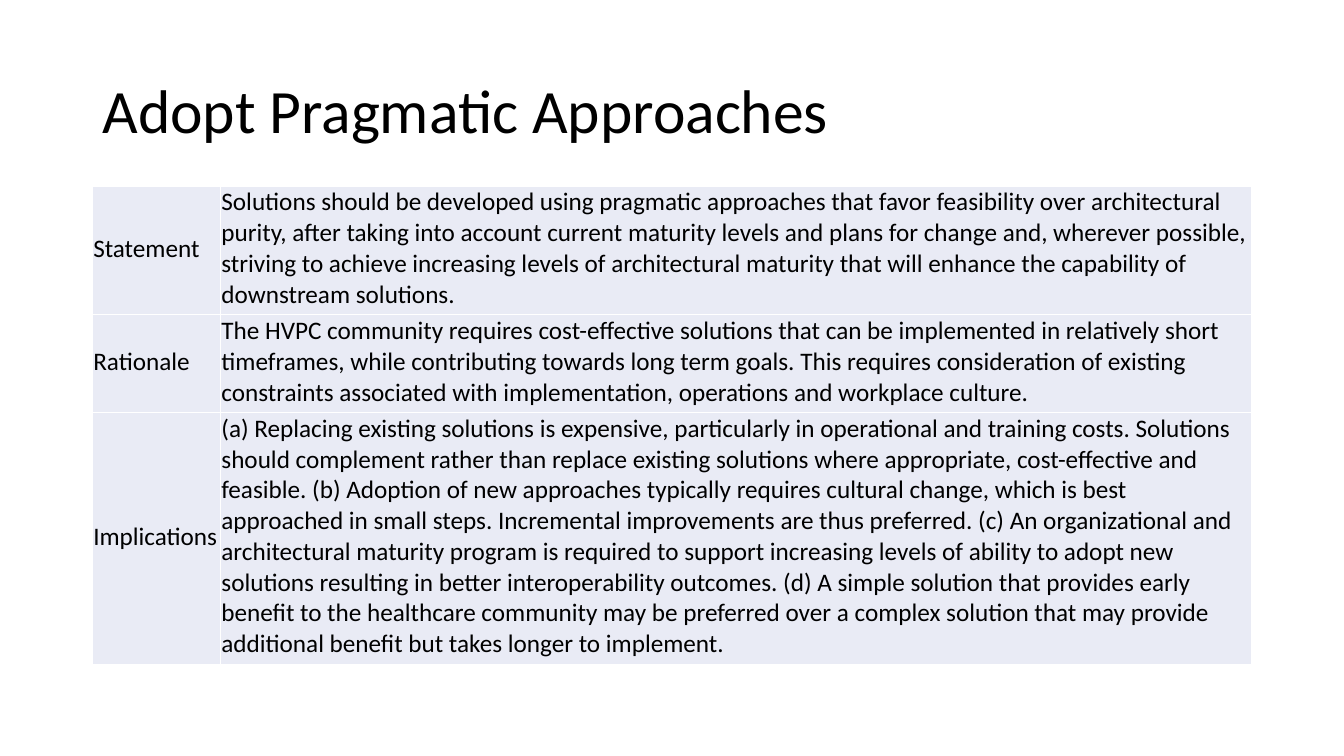
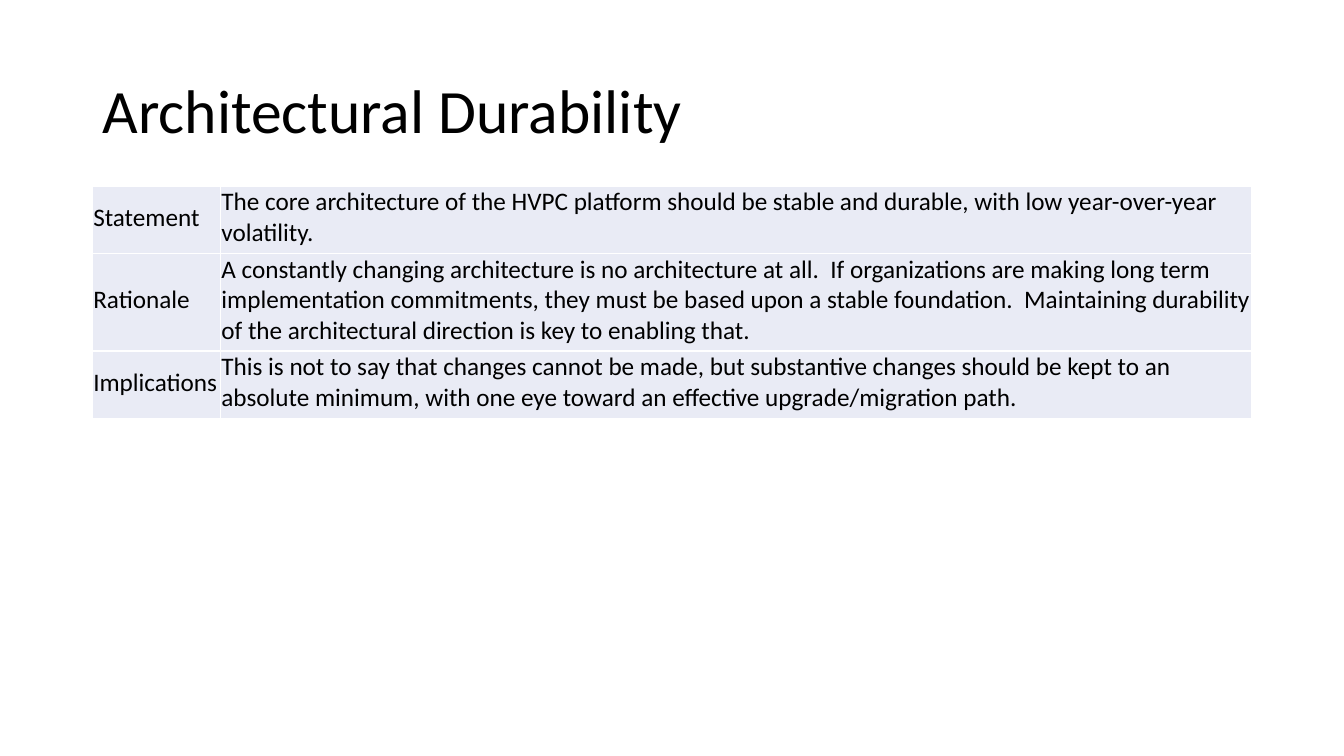
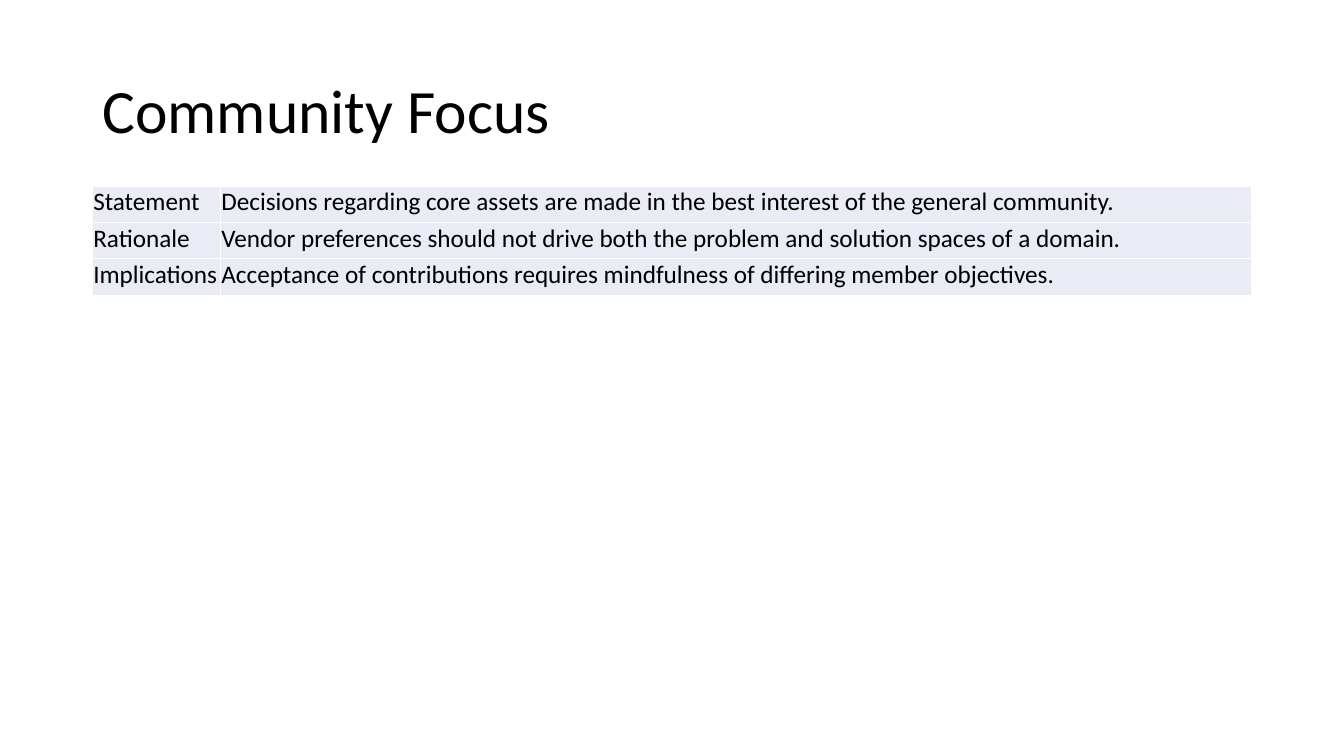
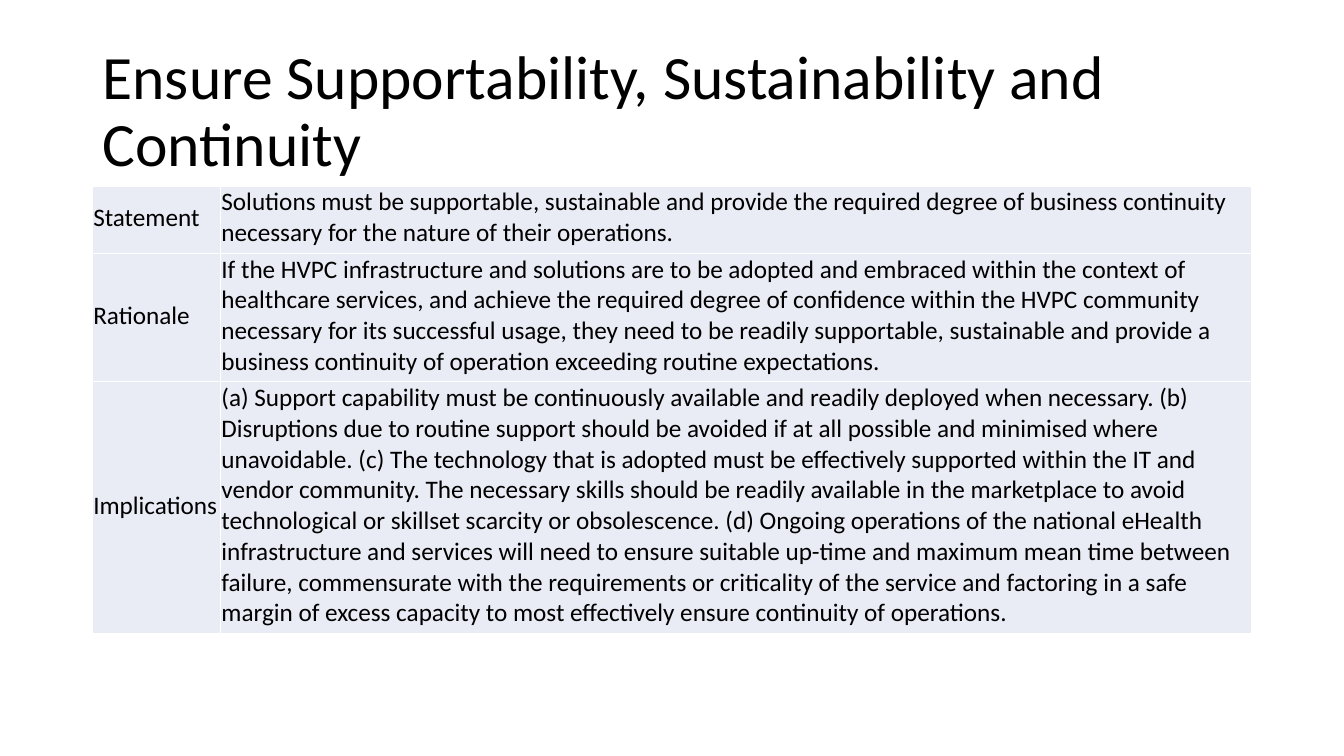
from lxml.etree import SubElement
from pptx import Presentation
from pptx.dml.color import RGBColor
from pptx.enum.text import MSO_ANCHOR, MSO_AUTO_SIZE, PP_ALIGN
from pptx.oxml.ns import qn
from pptx.util import Cm, Pt

LABELS = ("Statement", "Rationale", "Implications")

SLIDES = [
    ("Adopt Pragmatic Approaches", [
        (4, "Solutions should be developed using pragmatic approaches that favor feasibility over "
            "architectural purity, after taking into account current maturity levels and plans for "
            "change and, wherever possible, striving to achieve increasing levels of architectural "
            "maturity that will enhance the capability of downstream solutions."),
        (3, "The HVPC community requires cost-effective solutions that can be implemented in "
            "relatively short timeframes, while contributing towards long term goals. This requires "
            "consideration of existing constraints associated with implementation, operations and "
            "workplace culture."),
        (8, "(a) Replacing existing solutions is expensive, particularly in operational and training "
            "costs. Solutions should complement rather than replace existing solutions where "
            "appropriate, cost-effective and feasible. (b) Adoption of new approaches typically "
            "requires cultural change, which is best approached in small steps. Incremental "
            "improvements are thus preferred. (c) An organizational and architectural maturity "
            "program is required to support increasing levels of ability to adopt new solutions "
            "resulting in better interoperability outcomes. (d) A simple solution that provides "
            "early benefit to the healthcare community may be preferred over a complex solution "
            "that may provide additional benefit but takes longer to implement."),
    ]),
    ("Architectural Durability", [
        (2, "The core architecture of the HVPC platform should be stable and durable, with low "
            "year-over-year volatility."),
        (3, "A constantly changing architecture is no architecture at all.  If organizations are "
            "making long term implementation commitments, they must be based upon a stable "
            "foundation.  Maintaining durability of the architectural direction is key to "
            "enabling that."),
        (2, "This is not to say that changes cannot be made, but substantive changes should be kept "
            "to an absolute minimum, with one eye toward an effective upgrade/migration path."),
    ]),
    ("Community Focus", [
        (1, "Decisions regarding core assets are made in the best interest of the general community."),
        (1, "Vendor preferences should not drive both the problem and solution spaces of a domain."),
        (1, "Acceptance of contributions requires mindfulness of differing member objectives."),
    ]),
    ("Ensure Supportability, Sustainability and Continuity", [
        (2, "Solutions must be supportable, sustainable and provide the required degree of business "
            "continuity necessary for the nature of their operations."),
        (4, "If the HVPC infrastructure and solutions are to be adopted and embraced within the "
            "context of healthcare services, and achieve the required degree of confidence within "
            "the HVPC community necessary for its successful usage, they need to be readily "
            "supportable, sustainable and provide a business continuity of operation exceeding "
            "routine expectations."),
        (8, "(a) Support capability must be continuously available and readily deployed when "
            "necessary. (b) Disruptions due to routine support should be avoided if at all possible "
            "and minimised where unavoidable. (c) The technology that is adopted must be effectively "
            "supported within the IT and vendor community. The necessary skills should be readily "
            "available in the marketplace to avoid technological or skillset scarcity or "
            "obsolescence. (d) Ongoing operations of the national eHealth infrastructure and "
            "services will need to ensure suitable up-time and maximum mean time between failure, "
            "commensurate with the requirements or criticality of the service and factoring in a "
            "safe margin of excess capacity to most effectively ensure continuity of operations."),
    ]),
]

COLORS = {"text": "000000", "cell": "E9EBF5", "line": "FFFFFF"}
FONT = "Calibri"
LEFT, TOP, HEAD = 2.33, 1.01, 3.68
COLS = (3.23, 25.98)
LINE, PAD, EDGE = 0.77, 0.14, 0.02


def write(frame, text, size=18, space=1.0):
    frame.text = text
    par = frame.paragraphs[0]
    par.alignment = PP_ALIGN.LEFT
    par.line_spacing = space
    font = par.runs[0].font
    font.name, font.size = FONT, Pt(size)
    font.color.rgb = RGBColor.from_string(COLORS["text"])


def border(cell):
    props = cell._tc.get_or_add_tcPr()
    for side in ("a:lnL", "a:lnR", "a:lnT", "a:lnB"):
        line = SubElement(props, qn(side), w=str(Pt(1)))
        fill = SubElement(line, qn("a:solidFill"))
        SubElement(fill, qn("a:srgbClr"), val=COLORS["line"])


def fill_cell(cell, text):
    write(cell.text_frame, text)
    cell.vertical_anchor = MSO_ANCHOR.MIDDLE
    cell.margin_left = cell.margin_right = cell.margin_top = Cm(EDGE)
    cell.margin_bottom = Cm(PAD - EDGE)
    border(cell)
    cell.fill.solid()
    cell.fill.fore_color.rgb = RGBColor.from_string(COLORS["cell"])


def add_title(slide, text):
    title = slide.shapes.title
    title.left, title.top = Cm(LEFT), Cm(TOP)
    title.width, title.height = Cm(sum(COLS)), Cm(HEAD)
    frame = title.text_frame
    frame.word_wrap = True
    frame.auto_size = MSO_AUTO_SIZE.NONE
    frame.vertical_anchor = MSO_ANCHOR.MIDDLE
    write(frame, text, size=44, space=0.9)


def add_grid(slide, rows):
    highs = [count * LINE + PAD for count, _ in rows]
    table = slide.shapes.add_table(
        len(rows), len(COLS), Cm(LEFT), Cm(TOP + HEAD), Cm(sum(COLS)), Cm(sum(highs))
    ).table
    table.first_row = table.horz_banding = False
    for col, width in zip(table.columns, COLS):
        col.width = Cm(width)
    for row, high, label, (_, text) in zip(table.rows, highs, LABELS, rows):
        row.height = Cm(high)
        for cell, words in zip(row.cells, (label, text)):
            fill_cell(cell, words)


def main():
    deck = Presentation()
    deck.slide_width, deck.slide_height = Cm(33.87), Cm(19.05)
    for title, rows in SLIDES:
        slide = deck.slides.add_slide(deck.slide_layouts[5])
        add_title(slide, title)
        add_grid(slide, rows)
    deck.save("out.pptx")


if __name__ == "__main__":
    main()
